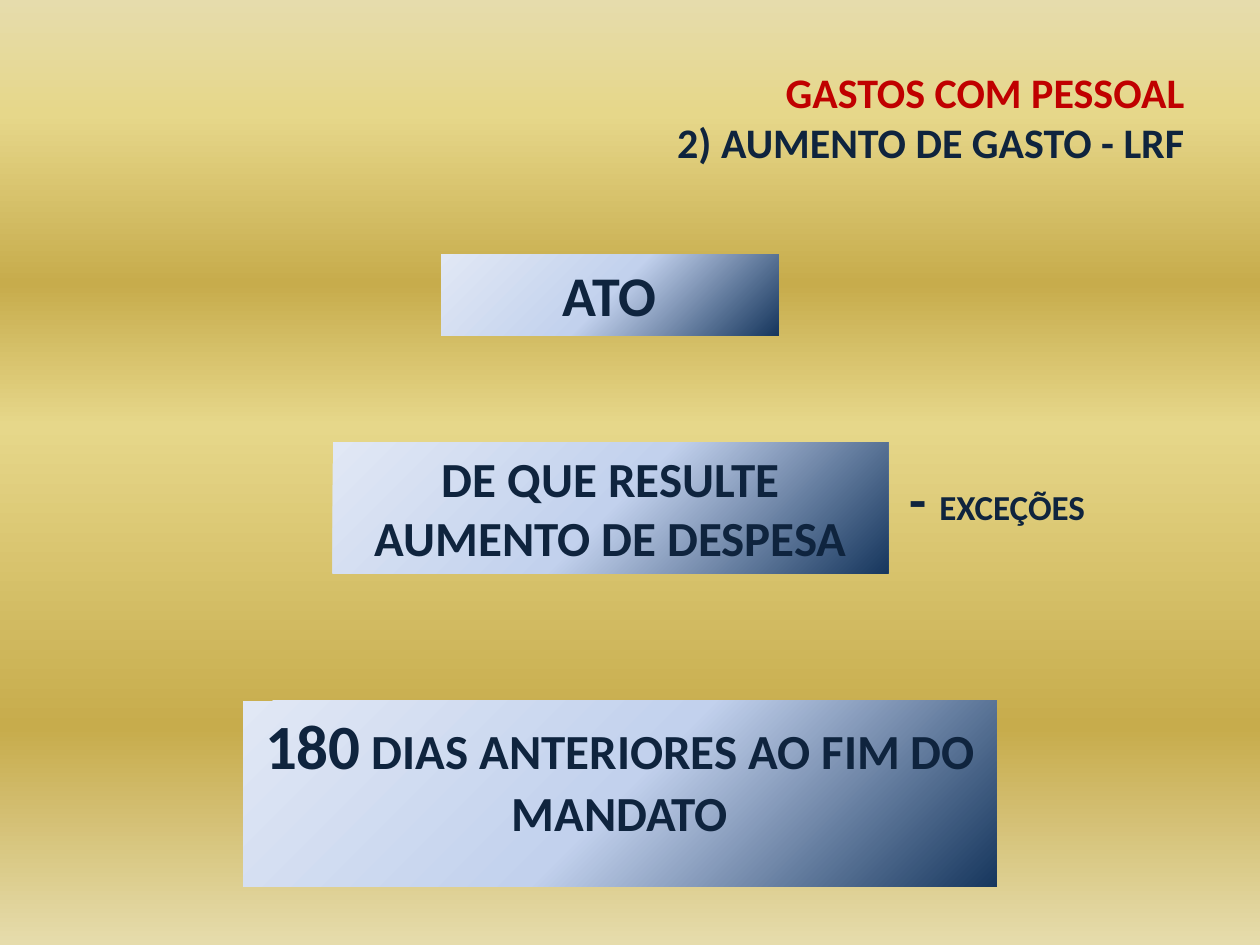
import pptx
import pptx.dml.color
import pptx.enum.shapes
import pptx.enum.text
import pptx.oxml
import pptx.oxml.ns
import pptx.util

Inches = pptx.util.Inches
ALIGN = pptx.enum.text.PP_ALIGN
ANCHOR = pptx.enum.text.MSO_ANCHOR

COLORS = {
    "red": "C00000", "navy": "0F243E",
    "gold_pale": "E6DCAC", "gold_light": "E6D78A", "gold_dark": "C7AC4C",
    "blue_dark": "17375E", "blue_mid": "C2D1ED", "blue_pale": "E1E8F5",
}
GOLD_STOPS = [(0, "gold_pale"), (12, "gold_light"), (30, "gold_dark"),
              (45, "gold_light"), (77, "gold_dark"), (100, "gold_pale")]
BLUE_STOPS = [(0, "blue_dark"), (50, "blue_mid"), (100, "blue_pale")]
DOWNWARD = '<a:lin ang="5400000" scaled="0"/>'
FROM_BOTTOM_RIGHT = '<a:path path="circle"><a:fillToRect l="100000" t="100000"/></a:path>'


class SlideBuilder:
    def __init__(self, presentation):
        self.font = {"name": "Calibri", "bold": True}
        self.slide = presentation.slides.add_slide(presentation.slide_layouts[5])

    def gradient(self, owner, fill, stops, direction):
        """Give the fill, held in the owner's element, any number of stops."""
        fill.gradient()
        old = owner.element.find(".//" + pptx.oxml.ns.qn("a:gradFill"))
        stop_xml = "".join(
            f'<a:gs pos="{position * 1000}"><a:srgbClr val="{COLORS[color]}"/></a:gs>'
            for position, color in stops)
        new = pptx.oxml.parse_xml(
            f'<a:gradFill {pptx.oxml.ns.nsdecls("a")} rotWithShape="1">'
            f"<a:gsLst>{stop_xml}</a:gsLst>{direction}</a:gradFill>")
        old.getparent().replace(old, new)

    def background(self):
        self.gradient(self.slide, self.slide.background.fill, GOLD_STOPS, DOWNWARD)

    def set_text(self, shape, lines, align, anchor):
        """Fill the shape with lines of (text, size, color) runs."""
        frame = shape.text_frame
        for name, value in {"word_wrap": True, "vertical_anchor": anchor}.items():
            setattr(frame, name, value)
        paragraph = frame.paragraphs[0]
        paragraph.alignment = align
        for number, runs in enumerate(lines):
            if number:
                paragraph.add_line_break()
            for text, size, color in runs:
                run = paragraph.add_run()
                run.text = text
                for name, value in {**self.font, "size": pptx.util.Pt(size)}.items():
                    setattr(run.font, name, value)
                run.font.color.rgb = pptx.dml.color.RGBColor.from_string(COLORS[color])

    def title(self, place, lines):
        title = self.slide.shapes.title
        for name, value in zip(("left", "top", "width", "height"), place):
            setattr(title, name, Inches(value))
        self.set_text(title, lines, ALIGN.RIGHT, ANCHOR.MIDDLE)

    def box(self, place, runs):
        shape = self.slide.shapes.add_shape(
            pptx.enum.shapes.MSO_SHAPE.RECTANGLE, *map(Inches, place))
        shape.shadow.inherit = False
        self.gradient(shape, shape.fill, BLUE_STOPS, FROM_BOTTOM_RIGHT)
        shape.line.fill.background()
        self.set_text(shape, [runs], ALIGN.CENTER, ANCHOR.TOP)

    def label(self, place, runs):
        shape = self.slide.shapes.add_textbox(*map(Inches, place))
        self.set_text(shape, [runs], ALIGN.LEFT, ANCHOR.TOP)


def main():
    presentation = pptx.Presentation()
    presentation.slide_width = Inches(10)
    presentation.slide_height = Inches(7.5)

    builder = SlideBuilder(presentation)
    builder.background()
    builder.title((0.5, 0.3, 9, 1.25), [
        [("GASTOS COM PESSOAL", 24, "red")],
        [("2) AUMENTO DE GASTO - LRF", 24, "navy")],
    ])
    builder.label((7.12, 3.64, 2.38, 0.64),
                  [("- ", 32, "navy"), ("EXCEÇÕES", 20, "navy")])
    builder.box((3.5, 2.02, 2.68, 0.64), [("ATO", 32, "navy")])
    builder.box((2.64, 3.51, 4.41, 1.04),
                [("DE QUE RESULTE AUMENTO DE DESPESA", 28, "navy")])
    builder.box((1.93, 5.56, 5.98, 1.48),
                [("180", 36, "navy"), (" DIAS ANTERIORES AO FIM DO MANDATO", 28, "navy")])
    presentation.save("out.pptx")


if __name__ == "__main__":
    main()
